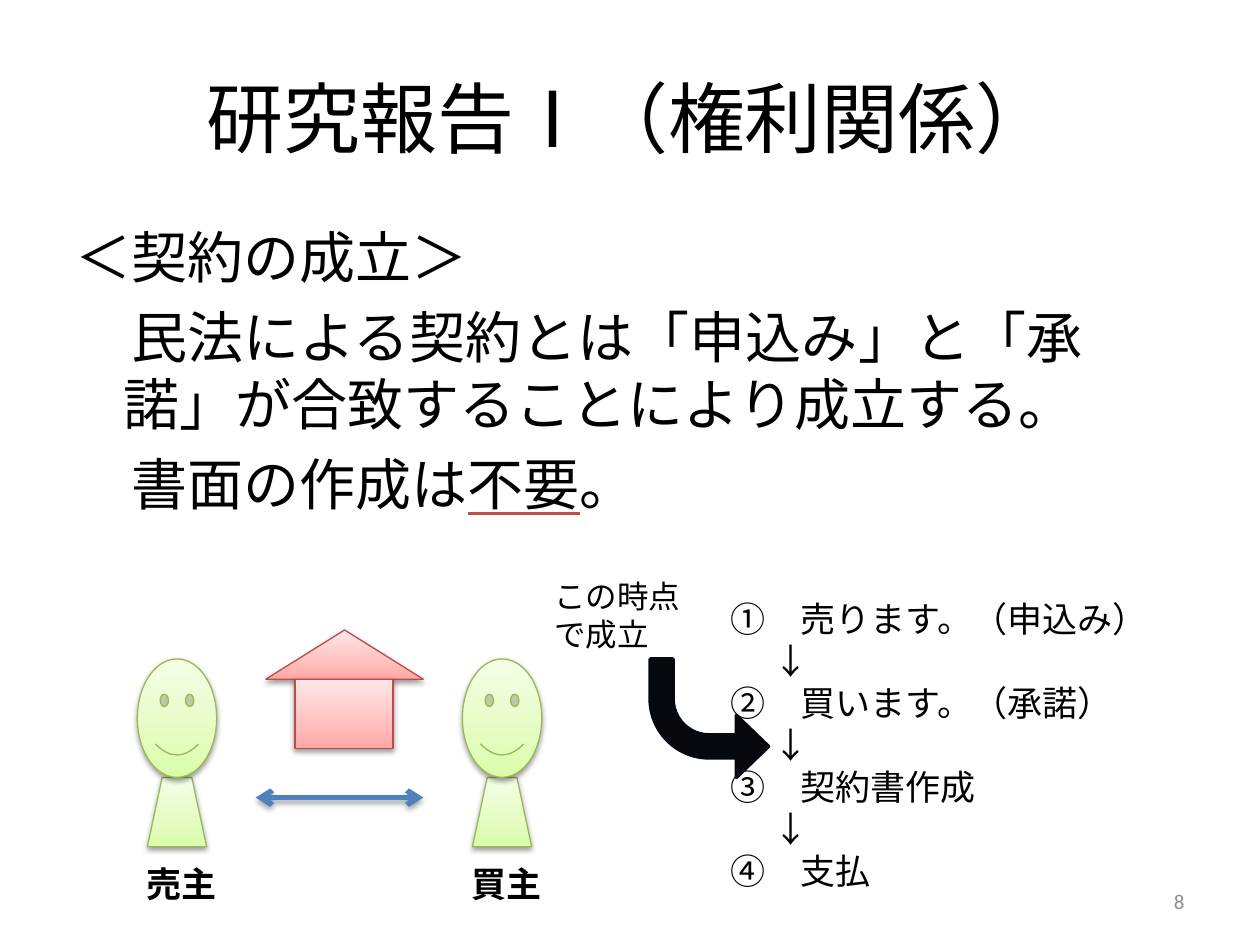
from copy import deepcopy

from lxml import etree
from pptx import Presentation
from pptx.dml.color import RGBColor
from pptx.enum.lang import MSO_LANGUAGE_ID as Lang
from pptx.enum.shapes import MSO_CONNECTOR as Connector, MSO_SHAPE as Shape
from pptx.enum.text import MSO_ANCHOR as Anchor, PP_ALIGN as Align
from pptx.oxml.ns import qn
from pptx.util import Inches, Pt

COLORS = {
    "text": "000000", "number": "8C8C8C", "underline": "C0504D",
    "person_line": "98B955", "house_line": "BF4C48",
    "exchange": "4F81BD", "moment": "05080D",
}
GRADIENTS = {
    "person": ["DAFDA7", "E4FCC2", "F5FFE7"],
    "house": ["FFA6A5", "FFC0BF", "FFE7E7"],
}


def add_text(box, paragraphs, size, color="text", align=Align.LEFT,
             anchor=Anchor.TOP, bold=False, **paragraph_format):
    """Add a text box; each paragraph is a list of runs."""
    frame = slide.shapes.add_textbox(*map(Inches, box)).text_frame
    frame.word_wrap = True
    frame.vertical_anchor = anchor
    for index, runs in enumerate(paragraphs):
        paragraph = frame.paragraphs[0] if index == 0 else frame.add_paragraph()
        paragraph.alignment = align
        for name, value in paragraph_format.items():
            setattr(paragraph, name, value)
        for text in runs:
            run = paragraph.add_run()
            run.text = text
            run.font.color.rgb = RGBColor.from_string(COLORS[color])
            font_format = {"name": "Calibri", "size": Pt(size), "bold": bold,
                           "language_id": Lang.JAPANESE}
            for name, value in font_format.items():
                setattr(run.font, name, value)
    return frame


def add_shaded(group, kind, box, theme):
    """Add a shape with a three-stop gradient and a soft shadow."""
    shape = group.shapes.add_shape(kind, *map(Inches, box))
    fill = shape.fill
    fill.gradient()
    fill.gradient_angle = 90
    properties = shape._element.spPr
    stop_list = properties.find(".//" + qn("a:gsLst"))
    stop_list.insert(1, deepcopy(stop_list[0]))
    for stop, position, color in zip(fill.gradient_stops, (0, 0.35, 1), GRADIENTS[theme]):
        stop.position = position
        stop.color.rgb = RGBColor.from_string(color)
    shape.line.color.rgb = RGBColor.from_string(COLORS[theme + "_line"])
    shape.line.width = Pt(0.75)
    shape.shadow.inherit = False
    shadow = etree.SubElement(properties.find(qn("a:effectLst")), qn("a:outerShdw"),
                              blurRad="40000", dist="20000", dir="5400000", rotWithShape="0")
    black = etree.SubElement(shadow, qn("a:srgbClr"), val="000000")
    etree.SubElement(black, qn("a:alpha"), val="38000")


prs = Presentation()
prs.slide_width, prs.slide_height = Inches(10), Inches(7.5)
slide = prs.slides.add_slide(prs.slide_layouts[6])

# Title, explanation and page number
add_text((0.5, 0.3, 9, 1.25), [["研究報告Ⅰ（権利関係）"]], 44,
         align=Align.CENTER, anchor=Anchor.MIDDLE)
explanation = add_text((0.5, 1.72, 9, 5.34), [
    ["＜契約の成立＞"],
    ["　民法による契約とは「申込み」と「承諾」が合致することにより成立する。"],
    ["　書面の作成は", "不要", "。"],
], 32, space_before=Pt(7))
for paragraph in explanation.paragraphs:
    indents = paragraph._p.get_or_add_pPr()
    indents.set("marL", str(Inches(0.38)))
    indents.set("indent", str(Inches(-0.38)))
unneeded = explanation.paragraphs[2].runs[1].font
unneeded.underline = True
underline_fill = etree.Element(qn("a:uFill"))
solid = etree.SubElement(underline_fill, qn("a:solidFill"))
etree.SubElement(solid, qn("a:srgbClr"), val=COLORS["underline"])
unneeded._element.find(qn("a:solidFill")).addnext(underline_fill)
add_text((7.17, 6.95, 2.33, 0.4), [["8"]], 12, "number", Align.RIGHT, Anchor.MIDDLE)

# Seller and buyer
for role, center in (("売主", 1.4), ("買主", 3.98)):
    person = slide.shapes.add_group_shape()
    add_shaded(person, Shape.TRAPEZOID, (center - 0.23, 6.17, 0.47, 0.55), "person")
    add_shaded(person, Shape.SMILEY_FACE, (center - 0.31, 5.23, 0.63, 0.94), "person")
    add_text((center - 0.78, 6.8, 1.64, 0.44), [[role]], 20, align=Align.CENTER, bold=True)

# Exchange between them
exchange = slide.shapes.add_connector(
    Connector.STRAIGHT, Inches(2.03), Inches(6.33), Inches(3.36), Inches(6.33))
exchange.line.color.rgb = RGBColor.from_string(COLORS["exchange"])
exchange.line.width = Pt(3)
for end in ("a:headEnd", "a:tailEnd"):
    etree.SubElement(exchange.line._get_or_add_ln(), qn(end), type="arrow")
effects = etree.SubElement(exchange._element.spPr, qn("a:effectLst"))
line_shadow = etree.SubElement(effects, qn("a:outerShdw"), blurRad="40000",
                               dist="23000", dir="5400000", rotWithShape="0")
shade = etree.SubElement(line_shadow, qn("a:srgbClr"), val="000000")
etree.SubElement(shade, qn("a:alpha"), val="35000")

# House
house = slide.shapes.add_group_shape()
add_shaded(house, Shape.FLOWCHART_EXTRACT, (2.11, 5, 1.25, 0.39), "house")
add_shaded(house, Shape.RECTANGLE, (2.34, 5.39, 0.78, 0.55), "house")

# Steps of the contract
steps = ["①　売ります。（申込み）", "②　買います。（承諾）", "③　契約書作成", "④　支払"]
step_lines = [[steps[0]]]
for step in steps[1:]:
    step_lines += [["　 ↓"], [step]]
add_text((5.7, 4.69, 3.91, 2.46), step_lines, 20)

# Moment at which the contract is concluded
moment = slide.shapes.add_shape(Shape.BENT_ARROW, *map(Inches, (5.16, 5.23, 0.94, 0.94)))
for index, value in enumerate((0.194, 0.262, 0.272, 0.499)):
    moment.adjustments[index] = value
moment.rotation = 180
moment._element.spPr.find(qn("a:xfrm")).set("flipH", "1")
moment.fill.solid()
for color in (moment.fill.fore_color, moment.line.color):
    color.rgb = RGBColor.from_string(COLORS["moment"])
moment.line.width = Pt(2)
moment.shadow.inherit = False
add_text((4.3, 4.53, 1.41, 0.71), [["この時点で成立"]], 18)

prs.save("out.pptx")
